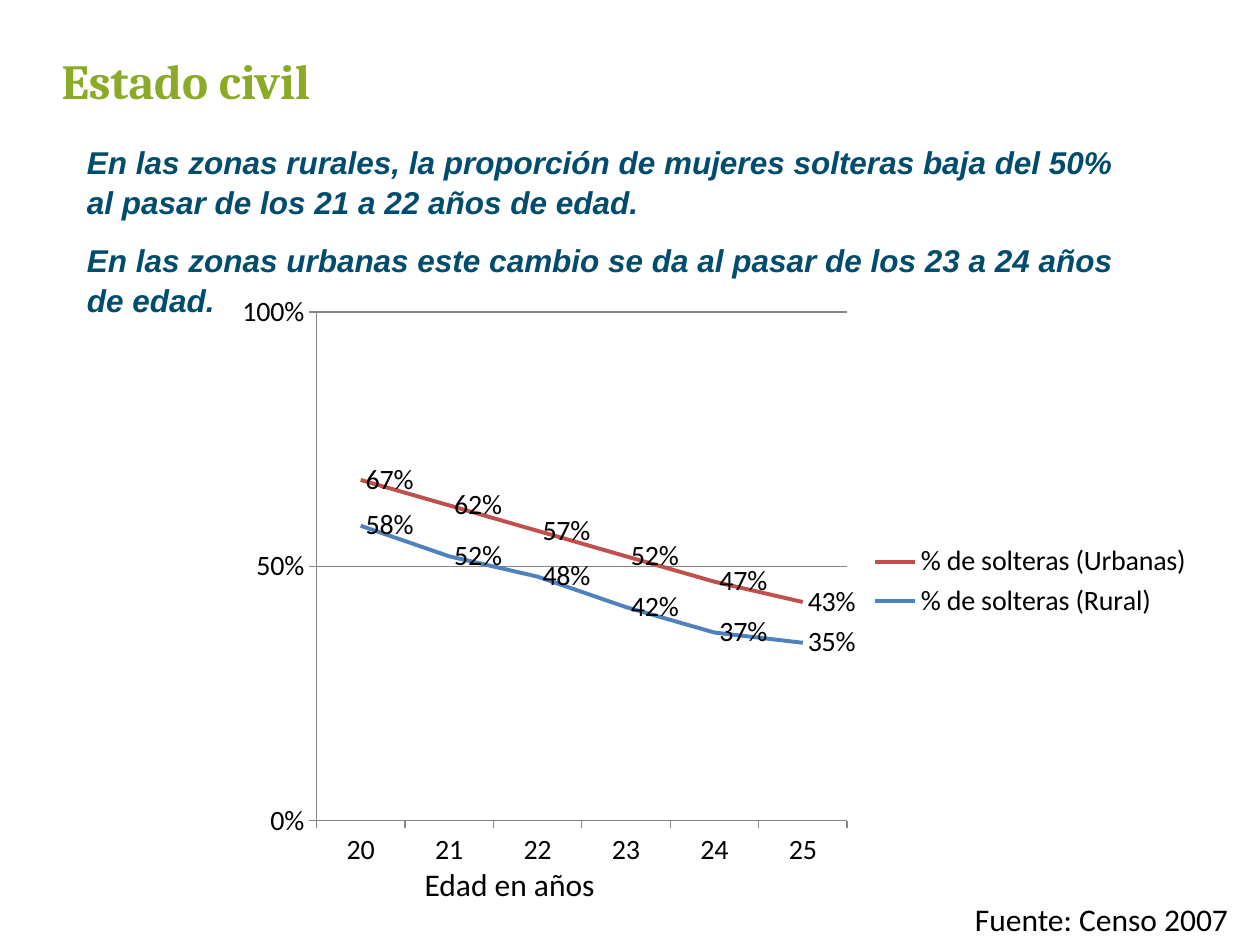
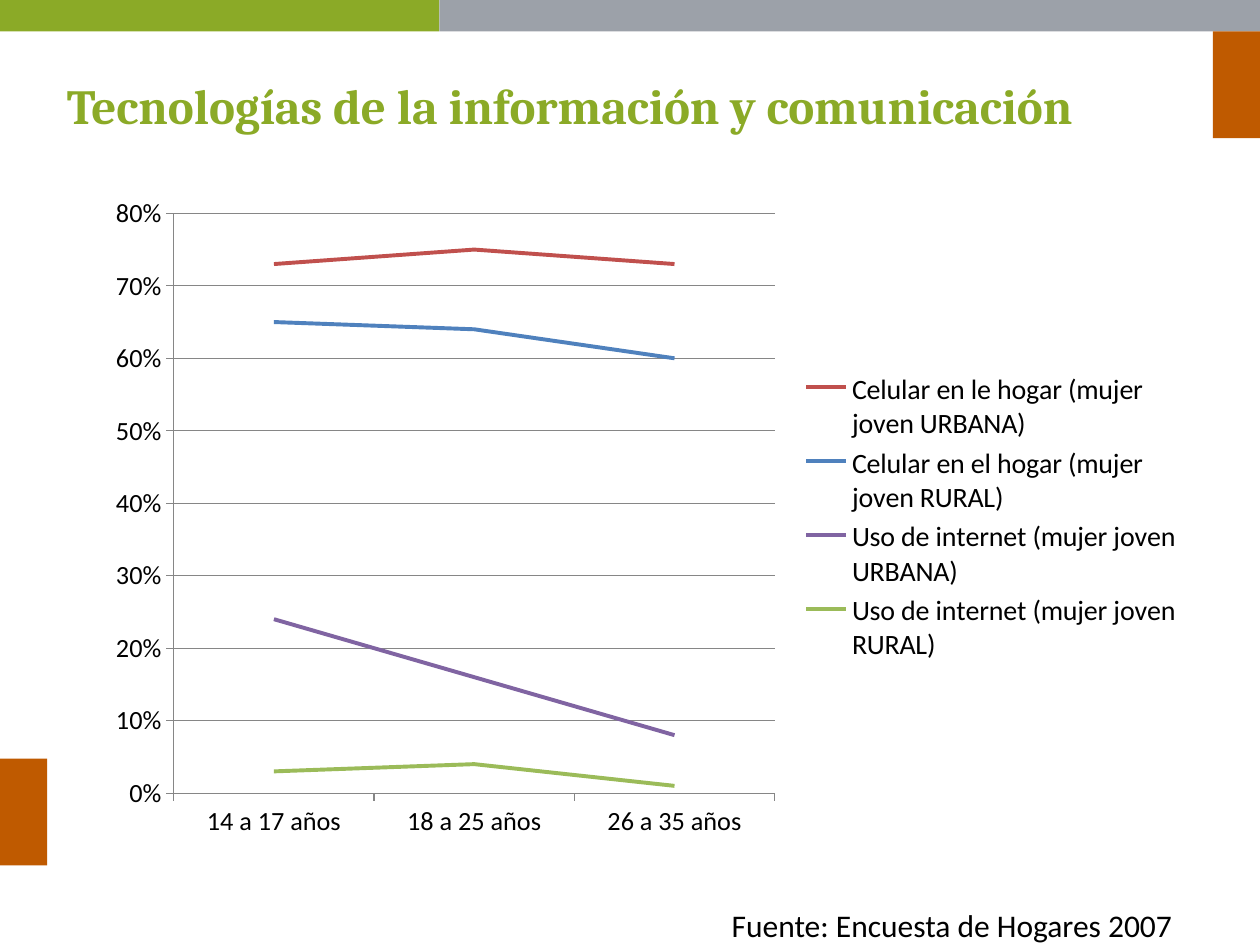
from dataclasses import dataclass

from lxml import etree
from pptx import Presentation
from pptx.chart.data import CategoryChartData
from pptx.dml.color import RGBColor
from pptx.enum.chart import (XL_CHART_TYPE, XL_LABEL_POSITION,
                             XL_LEGEND_POSITION, XL_TICK_MARK)
from pptx.enum.shapes import MSO_SHAPE
from pptx.enum.text import MSO_ANCHOR, MSO_AUTO_SIZE, PP_ALIGN
from pptx.oxml import parse_xml
from pptx.oxml.ns import nsdecls, qn
from pptx.util import Pt

LINE = XL_CHART_TYPE.LINE
LABEL_RIGHT = XL_LABEL_POSITION.RIGHT
LEGEND_RIGHT = XL_LEGEND_POSITION.RIGHT
TICK_OUTSIDE = XL_TICK_MARK.OUTSIDE
RECTANGLE = MSO_SHAPE.RECTANGLE
TOP, MIDDLE = MSO_ANCHOR.TOP, MSO_ANCHOR.MIDDLE
FIXED_SIZE = MSO_AUTO_SIZE.NONE
LEFT = PP_ALIGN.LEFT

WIDTH, HEIGHT = 720, 540
TITLE_AND_BODY, TITLE_ONLY = 1, 5
PERCENT = "0%"


@dataclass(frozen=True)
class Theme:
    # Colours
    green: str = "8BAA27"
    gray: str = "9CA1A9"
    orange: str = "BF5A00"
    navy: str = "004C6F"
    black: str = "000000"
    axis: str = "868686"
    red_line: str = "C0504D"
    blue_line: str = "4F81BD"
    purple_line: str = "8064A2"
    lime_line: str = "9BBB59"
    # Fonts and sizes
    title_font: str = "Cambria"
    body_font: str = "Arial"
    plain_font: str = "Calibri"
    title_size: int = 28
    text_size: int = 18
    chart_size: int = 16
    small_chart_size: int = 15


def points(*lengths):
    return [Pt(length) for length in lengths]


def format_font(font, name, size, color, bold=False, italic=False):
    font.name = name
    font.size = Pt(size)
    font.bold = bold
    font.italic = italic
    font.color.rgb = RGBColor.from_string(color)


def write(frame, *paragraphs, anchor=TOP, line_spacing=1.0, before=0, after=0,
          **font_format):
    """Fill a text frame with paragraphs that share one format."""
    frame.word_wrap = True
    frame.auto_size = FIXED_SIZE
    frame.vertical_anchor = anchor
    for index, text in enumerate(paragraphs):
        paragraph = frame.add_paragraph() if index else frame.paragraphs[0]
        paragraph.alignment = LEFT
        paragraph.line_spacing = line_spacing
        paragraph.space_before = Pt(before)
        paragraph.space_after = Pt(after)
        run = paragraph.add_run()
        run.text = text
        format_font(run.font, **font_format)


class Deck:
    """Holds the theme and the slide being built."""

    def __init__(self, theme):
        self.theme = theme
        self.presentation = Presentation()
        self.presentation.slide_width = Pt(WIDTH)
        self.presentation.slide_height = Pt(HEIGHT)
        self.slide = None

    def new_slide(self, layout):
        layouts = self.presentation.slide_layouts
        self.slide = self.presentation.slides.add_slide(layouts[layout])

    def place(self, placeholder, box):
        (placeholder.left, placeholder.top,
         placeholder.width, placeholder.height) = points(*box)
        return placeholder.text_frame

    def title(self, text, box):
        theme = self.theme
        write(self.place(self.slide.shapes.title, box), text, anchor=MIDDLE,
              line_spacing=0.9, name=theme.title_font, size=theme.title_size,
              color=theme.green, bold=True)

    def body(self, paragraphs, box):
        theme = self.theme
        frame = self.place(self.slide.placeholders[1], box)
        write(frame, *paragraphs, line_spacing=1.05, before=3.6, after=7.2,
              name=theme.body_font, size=theme.text_size, color=theme.navy,
              bold=True, italic=True)
        # Plain paragraphs: no bullet and no hanging indent
        for paragraph in frame.paragraphs:
            properties = paragraph._p.get_or_add_pPr()
            properties.set("marL", "0")
            properties.set("indent", "0")
            etree.SubElement(properties, qn("a:buNone"))

    def caption(self, text, box):
        theme = self.theme
        caption = self.slide.shapes.add_textbox(*points(*box))
        write(caption.text_frame, text, name=theme.plain_font,
              size=theme.text_size, color=theme.black)

    def band(self, color, box):
        band = self.slide.shapes.add_shape(RECTANGLE, *points(*box))
        band.shadow.inherit = False
        band.fill.solid()
        band.fill.fore_color.rgb = RGBColor.from_string(color)
        band.line.fill.background()

    def line_chart(self, categories, series, box, plot_area, size, maximum,
                   step, labels=False):
        """Series are (name, values, colour); plot_area is in chart fractions."""
        theme = self.theme
        data = CategoryChartData(number_format=PERCENT)
        data.categories = categories
        for name, values, _ in series:
            data.add_series(name, values)
        chart = self.slide.shapes.add_chart(LINE, *points(*box), data).chart
        chart.has_title = False
        format_font(chart.font, theme.plain_font, size, theme.black)

        # Lines and their value labels
        for line, (_, _, color) in zip(chart.plots[0].series, series):
            line.smooth = False
            line.format.line.width = Pt(2.25)
            line.format.line.color.rgb = RGBColor.from_string(color)
            if labels:
                line.data_labels.show_value = True
                line.data_labels.number_format = PERCENT
                line.data_labels.number_format_is_linked = False
                line.data_labels.position = LABEL_RIGHT
        chart.plots[0].vary_by_categories = False

        # Axes and gridlines
        values_axis = chart.value_axis
        values_axis.minimum_scale = 0
        values_axis.maximum_scale = maximum
        values_axis.major_unit = step
        values_axis.has_major_gridlines = True
        values_axis.tick_labels.number_format = PERCENT
        values_axis.tick_labels.number_format_is_linked = False
        for axis in (values_axis, chart.category_axis):
            axis.major_tick_mark = TICK_OUTSIDE
        for part in (values_axis, chart.category_axis,
                     values_axis.major_gridlines):
            part.format.line.width = Pt(0.75)
            part.format.line.color.rgb = RGBColor.from_string(theme.axis)

        # Legend
        chart.has_legend = True
        chart.legend.position = LEGEND_RIGHT
        chart.legend.include_in_layout = False
        format_font(chart.legend.font, theme.plain_font, theme.chart_size,
                    theme.black)
        self.fix_plot_area(chart, plot_area)

    def fix_plot_area(self, chart, plot_area):
        sizes = "".join(f'<c:{key} val="{value}"/>'
                        for key, value in zip("xywh", plot_area))
        layout = parse_xml(
            f'<c:layout {nsdecls("c")}><c:manualLayout>'
            '<c:layoutTarget val="inner"/><c:xMode val="edge"/>'
            f'<c:yMode val="edge"/>{sizes}</c:manualLayout></c:layout>')
        plot = chart._chartSpace.chart.plotArea
        for old_layout in plot.findall(qn("c:layout")):
            plot.remove(old_layout)
        plot.insert(0, layout)


def marital_status(deck):
    theme = deck.theme
    deck.new_slide(TITLE_AND_BODY)
    deck.title("Estado civil", (28, 29, 670, 37))
    deck.body(["En las zonas rurales, la proporción de mujeres solteras baja "
               "del 50% al pasar de los 21 a 22 años de edad.",
               "En las zonas urbanas este cambio se da al pasar de los 23 a "
               "24 años de edad."], (42.5, 77, 607, 142.5))
    deck.caption("Edad en años", (235.5, 491, 170, 29))
    deck.caption("Fuente: Censo 2007", (550, 511, 170, 29))
    deck.line_chart(
        [str(age) for age in range(20, 26)],
        [("% de solteras (Urbanas)",
          (0.67, 0.62, 0.57, 0.52, 0.47, 0.43), theme.red_line),
         ("% de solteras (Rural)",
          (0.58, 0.52, 0.48, 0.42, 0.37, 0.35), theme.blue_line)],
        box=(127.5, 162, 561.5, 340.5), plot_area=(0.095, 0.048, 0.54, 0.854),
        size=theme.chart_size, maximum=1, step=0.5, labels=True)


def technologies(deck):
    theme = deck.theme
    deck.new_slide(TITLE_ONLY)

    # Top bands and side blocks
    band_height, split = 18, 251
    side_width, side_height = 27, 61
    deck.band(theme.gray, (split, 0, WIDTH - split, band_height))
    deck.band(theme.green, (0, 0, split, band_height))
    for left, top in ((WIDTH - side_width, band_height), (0, 433.5)):
        deck.band(theme.orange, (left, top, side_width, side_height))

    deck.title("Tecnologías de la información y comunicación",
               (31, 43, 614, 38))
    deck.line_chart(
        ["14 a 17 años", "18 a 25 años", "26 a 35 años"],
        [("Celular en le hogar (mujer joven URBANA)",
          (0.73, 0.75, 0.73), theme.red_line),
         ("Celular en el hogar (mujer joven RURAL)",
          (0.65, 0.64, 0.6), theme.blue_line),
         ("Uso de internet (mujer joven URBANA)",
          (0.24, 0.16, 0.08), theme.purple_line),
         ("Uso de internet (mujer joven RURAL)",
          (0.03, 0.04, 0.01), theme.lime_line)],
        box=(54, 106, 629, 380), plot_area=(0.072, 0.042, 0.546, 0.872),
        size=theme.small_chart_size, maximum=0.8, step=0.1)
    deck.caption("Fuente: Encuesta de Hogares 2007", (411, 514, 309, 29))


def main():
    deck = Deck(Theme())
    marital_status(deck)
    technologies(deck)
    deck.presentation.save("out.pptx")


if __name__ == "__main__":
    main()
